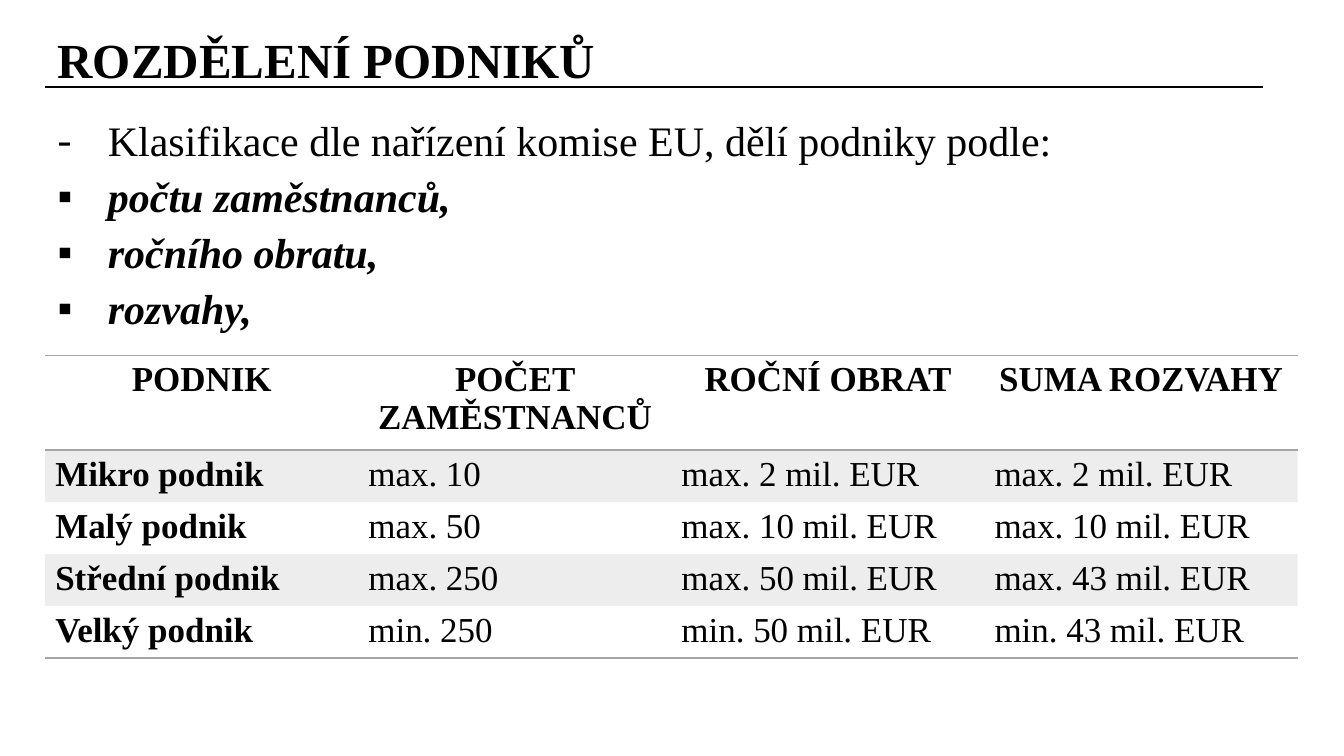
from lxml.etree import SubElement
from pptx import Presentation
from pptx.dml.color import RGBColor
from pptx.enum.shapes import MSO_CONNECTOR
from pptx.enum.text import MSO_ANCHOR, MSO_AUTO_SIZE, PP_ALIGN
from pptx.oxml.ns import qn
from pptx.util import Cm, Pt

COLORS = {"ink": "000000", "rule": "A5A5A5"}
PLAIN = "{2D5ABB26-0587-4C30-8999-92F81FD0307C}"  # table style without grid

ITEMS = [
    ("-", "Klasifikace dle nařízení komise EU, dělí podniky podle:"),
    ("▪", "počtu zaměstnanců,"),
    ("▪", "ročního obratu,"),
    ("▪", "rozvahy,"),
]
ROWS = [
    ("PODNIK", "POČET ZAMĚSTNANCŮ", "ROČNÍ OBRAT", "SUMA ROZVAHY"),
    ("Mikro podnik", "max. 10", "max. 2 mil. EUR", "max. 2 mil. EUR"),
    ("Malý podnik", "max. 50", "max. 10 mil. EUR", "max. 10 mil. EUR"),
    ("Střední podnik", "max. 250", "max. 50 mil. EUR", "max. 43 mil. EUR"),
    ("Velký podnik", "min. 250", "min. 50 mil. EUR", "min. 43 mil. EUR"),
]


class Page:
    def __init__(self, deck, font):
        self.slide = deck.slides.add_slide(deck.slide_layouts[1])
        self.font = font

    def style(self, para, size, bold=False, italic=False):
        for run in para.runs:
            font = run.font
            font.name, font.size = self.font, Pt(size)
            font.bold, font.italic = bold, italic
            font.color.rgb = RGBColor.from_string(COLORS["ink"])

    def place(self, shape, left, top, width, height):
        """Move a placeholder and return its text frame, without insets."""
        shape.left, shape.top = Cm(left), Cm(top)
        shape.width, shape.height = Cm(width), Cm(height)
        frame = shape.text_frame
        frame.margin_left = frame.margin_right = 0
        frame.margin_top = frame.margin_bottom = 0
        frame.vertical_anchor = MSO_ANCHOR.TOP
        frame.auto_size = MSO_AUTO_SIZE.NONE
        frame.word_wrap = True
        return frame

    def title(self, text, *box):
        frame = self.place(self.slide.shapes.title, *box)
        frame.text = text
        para = frame.paragraphs[0]
        para.alignment = PP_ALIGN.LEFT
        para.line_spacing = 0.9
        self.style(para, 35, bold=True)

    def bullets(self, items, *box):
        frame = self.place(self.slide.placeholders[1], *box)
        frame.text = "\n".join(text for _, text in items)
        for i, (para, (mark, _)) in enumerate(zip(frame.paragraphs, items)):
            para.line_spacing = 0.9
            para.space_before = Pt(7.5 if i else 0)
            self.style(para, 30, bold=i > 0, italic=i > 0)
            props = para._p.get_or_add_pPr()
            props.set("marL", str(Cm(1.27)))
            props.set("indent", str(Cm(-1.27)))
            color = SubElement(props, qn("a:buClr"))
            SubElement(color, qn("a:srgbClr"), val=COLORS["ink"])
            SubElement(props, qn("a:buFont"), typeface=self.font)
            SubElement(props, qn("a:buChar"), char=mark)

    def line(self, left, right, y):
        rule = self.slide.shapes.add_connector(
            MSO_CONNECTOR.STRAIGHT, Cm(left), Cm(y), Cm(right), Cm(y))
        rule.line.color.rgb = RGBColor.from_string(COLORS["ink"])
        rule.line.width = Pt(1.5)
        SubElement(rule.element.spPr, qn("a:effectLst"))

    def border(self, cell, side):
        edge = SubElement(cell._tc.get_or_add_tcPr(), qn("a:" + side), w=str(Pt(1)))
        fill = SubElement(edge, qn("a:solidFill"))
        SubElement(fill, qn("a:srgbClr"), val=COLORS["rule"])

    def shade(self, cell):
        cell.fill.solid()
        cell.fill.fore_color.rgb = RGBColor.from_string(COLORS["rule"])
        tint = next(cell._tc.tcPr.iter(qn("a:srgbClr")))
        SubElement(tint, qn("a:alpha"), val="20000")

    def table(self, rows, left, top, width, heads, height):
        """Draw rows; heads is the header's height, height that of the rest."""
        total = heads + height * (len(rows) - 1)
        shape = self.slide.shapes.add_table(
            len(rows), len(rows[0]), Cm(left), Cm(top), Cm(width), Cm(total))
        next(shape.element.iter(qn("a:tableStyleId"))).text = PLAIN
        table = shape.table
        table.first_row = table.horz_banding = False
        for r, row in enumerate(rows):
            table.rows[r].height = Cm(height if r else heads)
            for c, text in enumerate(row):
                cell = table.cell(r, c)
                cell.text = text
                para = cell.text_frame.paragraphs[0]
                para.alignment = PP_ALIGN.LEFT if r else PP_ALIGN.CENTER
                self.style(para, 25, bold=r == 0 or c == 0)
                if r == 0:
                    self.border(cell, "lnT")
                if r in (0, len(rows) - 1):
                    self.border(cell, "lnB")
                if r % 2:
                    self.shade(cell)
                else:
                    cell.fill.background()


def main():
    deck = Presentation()
    deck.slide_width, deck.slide_height = Cm(33.87), Cm(19.05)
    page = Page(deck, "Times New Roman")
    page.title("ROZDĚLENÍ PODNIKŮ", 1.45, 0.91, 30.5, 1.25)
    page.bullets(ITEMS, 1.45, 3.03, 30.5, 5.4)
    page.line(1.14, 31.83, 2.19)
    page.table(ROWS, 1.14, 8.95, 31.56, heads=2.39, height=1.31)
    deck.save("out.pptx")


if __name__ == "__main__":
    main()
